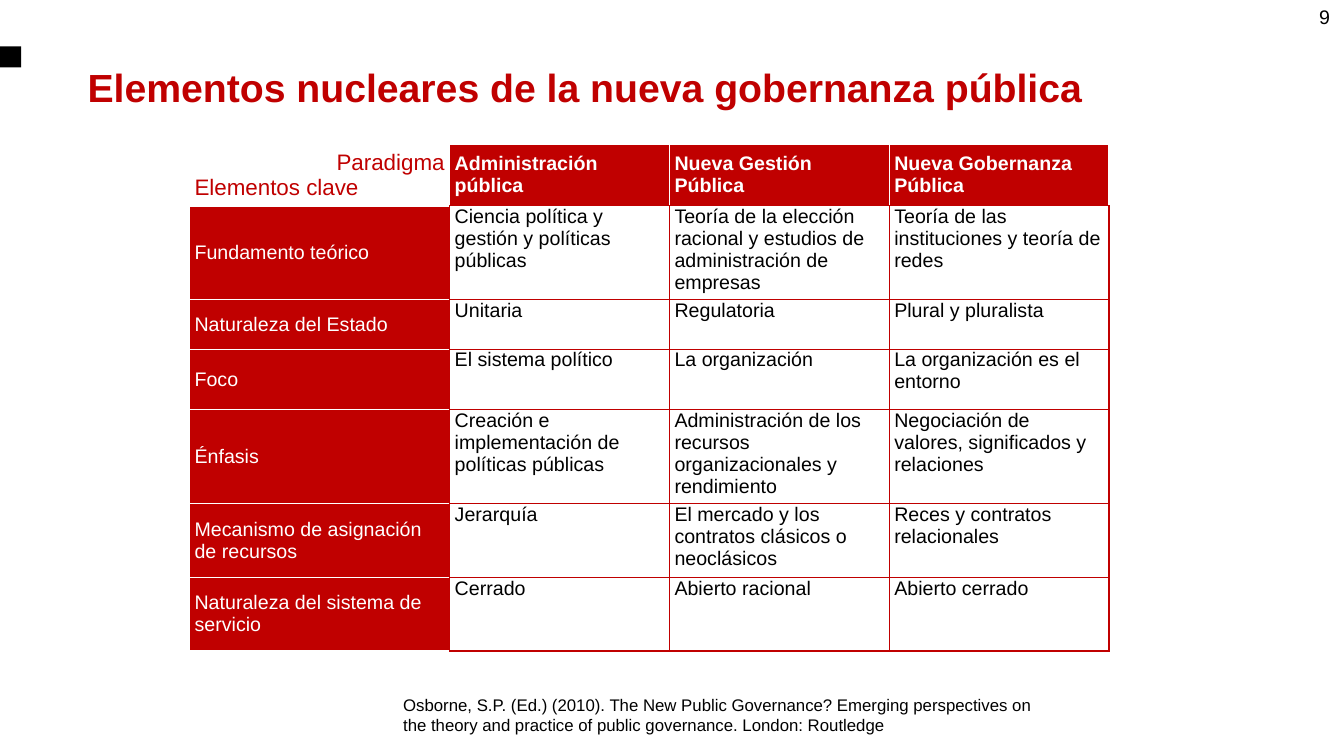
from lxml import etree
from pptx import Presentation
from pptx.dml.color import RGBColor
from pptx.enum.shapes import MSO_SHAPE
from pptx.enum.text import MSO_ANCHOR, PP_ALIGN
from pptx.oxml.ns import qn
from pptx.util import Inches, Pt

RECT = MSO_SHAPE.RECTANGLE
TOP, MIDDLE = MSO_ANCHOR.TOP, MSO_ANCHOR.MIDDLE
LEFT, RIGHT = PP_ALIGN.LEFT, PP_ALIGN.RIGHT
RED, WHITE, BLACK = "C00000", "FFFFFF", "000000"
COL_WIDTHS = [2.58, 2.18, 2.18, 2.18]
ROW_HEIGHTS = [0.61, 0.92, 0.49, 0.6, 0.93, 0.73, 0.73]
PARADIGMS = ["Administración pública", "Nueva Gestión Pública", "Nueva Gobernanza Pública"]
ELEMENTS = [
    ["Fundamento teórico", "Ciencia política y gestión y políticas públicas",
     "Teoría de la elección racional y estudios de administración de empresas",
     "Teoría de las instituciones y teoría de redes"],
    ["Naturaleza del Estado", "Unitaria", "Regulatoria", "Plural y pluralista"],
    ["Foco", "El sistema político", "La organización", "La organización es el entorno"],
    ["Énfasis", "Creación e implementación de políticas públicas",
     "Administración de los recursos organizacionales y rendimiento",
     "Negociación de valores, significados y relaciones"],
    ["Mecanismo de asignación de recursos", "Jerarquía",
     "El mercado y los contratos clásicos o neoclásicos", "Reces y contratos relacionales"],
    ["Naturaleza del sistema de servicio", "Cerrado", "Abierto racional", "Abierto cerrado"],
]


def rgb(color):
    """Turn a hex string into a colour."""
    return RGBColor.from_string(color)


def style(p, size, color, bold=False, align=LEFT):
    """Set the font and alignment of a paragraph."""
    p.alignment = align
    p.font.name, p.font.size, p.font.bold = "Arial", Pt(size), bold
    p.font.color.rgb = rgb(color)


def add_text(s, box, text, size, color, bold=False, align=LEFT, anchor=TOP, spacing=1.0):
    """Place one wrapped paragraph in a text box."""
    tf = s.shapes.add_textbox(*map(Inches, box)).text_frame
    tf.word_wrap, tf.vertical_anchor = True, anchor
    p = tf.paragraphs[0]
    p.text, p.line_spacing = text, spacing
    style(p, size, color, bold, align)


def add_marker(s, box):
    """Place the black square on the left edge."""
    sp = s.shapes.add_shape(RECT, *map(Inches, box))
    sp.shadow.inherit = False
    sp.fill.solid()
    sp.fill.fore_color.rgb = rgb(BLACK)
    sp.line.fill.background()


def set_borders(cell, left, right, top, bottom, bottom_width=1):
    """Draw the four borders of a cell in the given colours."""
    tc_pr = cell._tc.get_or_add_tcPr()
    sides = [("L", left, 1), ("R", right, 1), ("T", top, 1), ("B", bottom, bottom_width)]
    for i, (side, color, width) in enumerate(sides):
        ln = etree.Element(qn(f"a:ln{side}"), w=str(Pt(width)))
        fill = etree.SubElement(ln, qn("a:solidFill"))
        etree.SubElement(fill, qn("a:srgbClr"), val=color)
        tc_pr.insert(i, ln)


def fill_cell(cell, text, fill, color, size=14, bold=False, anchor=MIDDLE):
    """Write and style the text of a cell over a solid fill."""
    cell.fill.solid()
    cell.fill.fore_color.rgb = rgb(fill)
    cell.vertical_anchor = anchor
    cell.margin_left = cell.margin_right = Inches(0.05)
    cell.margin_top = cell.margin_bottom = 0
    cell.text = text
    for p in cell.text_frame.paragraphs:
        style(p, size, color, bold)


def add_paradigm_table(s, left, top):
    """Place the table that compares the three paradigms."""
    table = s.shapes.add_table(
        len(ROW_HEIGHTS), len(COL_WIDTHS), Inches(left), Inches(top),
        Inches(sum(COL_WIDTHS)), Inches(sum(ROW_HEIGHTS))).table
    for col, width in zip(table.columns, COL_WIDTHS):
        col.width = Inches(width)
    for row, height in zip(table.rows, ROW_HEIGHTS):
        row.height = Inches(height)

    corner = table.cell(0, 0)
    fill_cell(corner, "Paradigma\nElementos clave", WHITE, RED, size=16)
    corner.text_frame.paragraphs[0].alignment = RIGHT
    set_borders(corner, WHITE, WHITE, WHITE, WHITE, bottom_width=3)
    for c, paradigm in enumerate(PARADIGMS, 1):
        cell = table.cell(0, c)
        fill_cell(cell, paradigm, RED, WHITE, bold=True)
        set_borders(cell, WHITE, WHITE, WHITE, RED)

    for r, (element, *values) in enumerate(ELEMENTS, 1):
        cell = table.cell(r, 0)
        fill_cell(cell, element, RED, WHITE)
        set_borders(cell, WHITE, RED, WHITE, WHITE)
        for c, value in enumerate(values, 1):
            cell = table.cell(r, c)
            fill_cell(cell, value, WHITE, BLACK, anchor=TOP)
            set_borders(cell, RED, RED, RED, RED)


def main():
    """Build the slide and save it."""
    prs = Presentation()
    prs.slide_width, prs.slide_height = Inches(13.33), Inches(7.5)
    s = prs.slides.add_slide(prs.slide_layouts[6])
    add_marker(s, (0, 0.46, 0.21, 0.21))
    add_text(s, (0.77, 0.56, 11.49, 0.66), "Elementos nucleares de la nueva gobernanza pública",
             28, RED, bold=True, anchor=MIDDLE, spacing=0.9)
    add_text(s, (12.89, 0, 0.4, 0.4), "9", 14, BLACK, align=RIGHT)
    add_text(s, (3.9, 6.84, 6.61, 0.5),
             "Osborne, S.P. (Ed.) (2010). The New Public Governance? Emerging perspectives on "
             "the theory and practice of public governance. London: Routledge", 12, BLACK)
    add_paradigm_table(s, 1.88, 1.43)
    prs.save("out.pptx")


if __name__ == "__main__":
    main()
